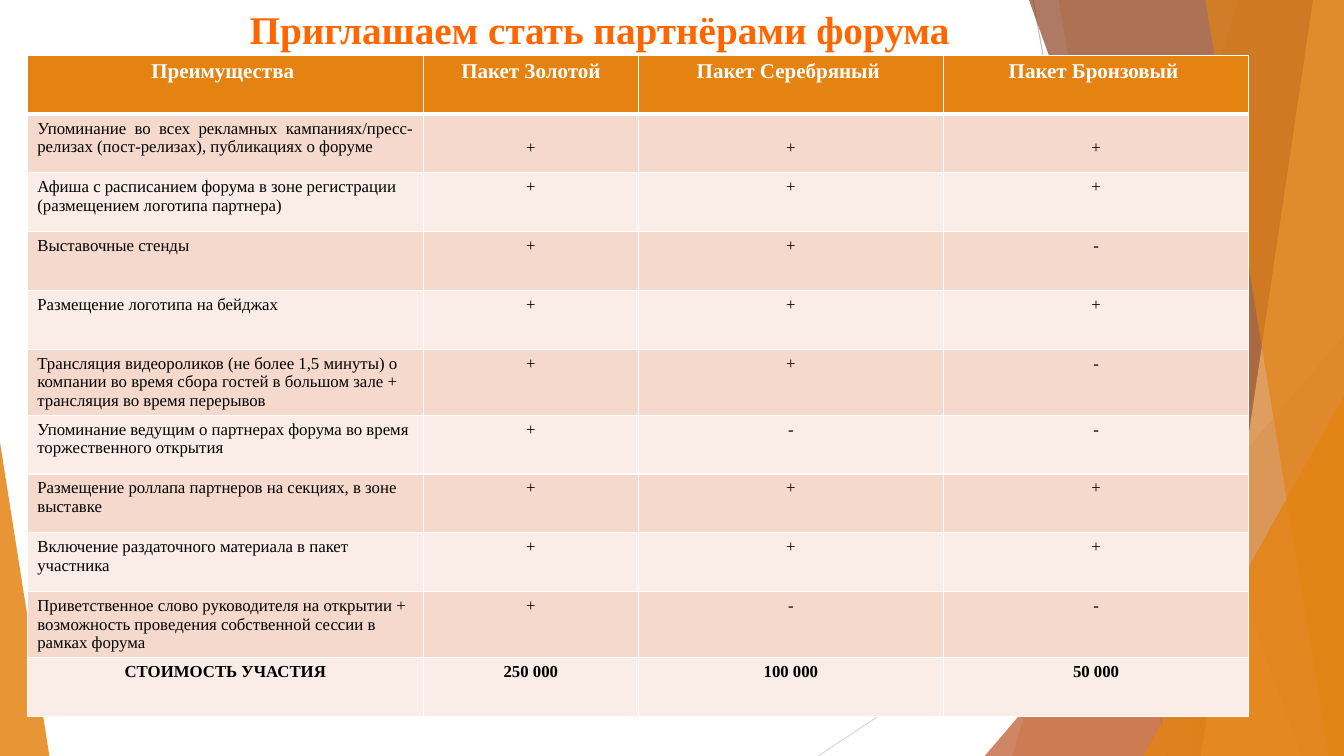
from lxml import etree
from pptx import Presentation
from pptx.dml.color import RGBColor
from pptx.enum import shapes, text
from pptx.oxml import ns
from pptx.util import Pt

ORANGE = RGBColor(0xE4, 0x83, 0x12)
AMBER = RGBColor(0xF3, 0xB5, 0x6C)
RUST = RGBColor(0xBD, 0x58, 0x2C)
BROWN = RGBColor(0x8E, 0x42, 0x21)
TITLE_ORANGE = RGBColor(0xFF, 0x66, 0x00)
PEACH = RGBColor(0xF5, 0xD9, 0xCC)
PALE_PEACH = RGBColor(0xFA, 0xED, 0xE7)
GRAY = RGBColor(0xBF, 0xBF, 0xBF)
LIGHT_GRAY = RGBColor(0xD9, 0xD9, 0xD9)
WHITE = RGBColor(0xFF, 0xFF, 0xFF)
BLACK = RGBColor(0, 0, 0)

FONT = "Times New Roman"
SLIDE_WIDTH, SLIDE_HEIGHT = 960, 540
CENTER, LEFT, JUSTIFY = (text.PP_ALIGN.CENTER, text.PP_ALIGN.LEFT,
                         text.PP_ALIGN.JUSTIFY)

PACKAGES = ["Преимущества ", "Пакет Золотой", "Пакет Серебряный ", "Пакет Бронзовый "]
BENEFITS = [
    ("Упоминание во всех рекламных кампаниях/пресс-релизах (пост-релизах), "
     "публикациях о форуме", "+++"),
    ("Афиша с расписанием форума в зоне регистрации (размещением логотипа партнера)", "+++"),
    ("Выставочные стенды", "++-"),
    ("Размещение логотипа на бейджах", "+++"),
    ("Трансляция видеороликов (не более 1,5 минуты) о компании во время сбора гостей "
     "в большом зале + трансляция во время перерывов", "++-"),
    ("Упоминание ведущим о партнерах форума во время торжественного открытия", "+--"),
    ("Размещение роллапа партнеров на секциях, в зоне выставке", "+++"),
    ("Включение раздаточного материала в пакет участника", "+++"),
    ("Приветственное слово руководителя на открытии + возможность проведения "
     "собственной сессии в рамках форума", "+--"),
]
PRICES = ["СТОИМОСТЬ УЧАСТИЯ", "250 000", "100 000", "50 000"]


def write(frame, words, size=12, color=BLACK, bold=False, align=CENTER):
    paragraph = frame.paragraphs[0]
    paragraph.alignment = align
    run = paragraph.add_run()
    run.text = words
    run.font.name = FONT
    run.font.size = Pt(size)
    run.font.bold = bold
    run.font.color.rgb = color


def paint(facet, color, opacity):
    facet.shadow.inherit = False
    facet.line.fill.background()
    facet.fill.solid()
    facet.fill.fore_color.rgb = color
    tint = facet.fill._xPr.find(".//" + ns.qn("a:srgbClr"))
    etree.SubElement(tint, ns.qn("a:alpha"), val=str(opacity * 1000))


def add_ray(slide, start, end, color):
    ray = slide.shapes.add_connector(
        shapes.MSO_CONNECTOR.STRAIGHT, *[Pt(v) for v in (*start, *end)])
    ray.line.color.rgb = color
    ray.line.width = Pt(0.75)
    etree.SubElement(ray._element.spPr, ns.qn("a:effectLst"))


def add_band(slide, right, height, top_inset, bottom_inset, color, opacity):
    outline = slide.shapes.build_freeform(Pt(right - top_inset), 0)
    outline.add_line_segments([
        (Pt(right), 0), (Pt(right), Pt(height)),
        (Pt(right - bottom_inset), Pt(height))], close=True)
    paint(outline.convert_to_shape(), color, opacity)


def add_corner(slide, left, bottom, width, height, apex, color, opacity):
    corner = slide.shapes.add_shape(
        shapes.MSO_SHAPE.ISOSCELES_TRIANGLE,
        Pt(left), Pt(bottom - height), Pt(width), Pt(height))
    corner.adjustments[0] = apex
    paint(corner, color, opacity)


def add_facets(slide, width, height):
    add_ray(slide, (width - 222, 0), (width - 126, height), GRAY)
    add_ray(slide, (width, height - 250), (width - 375.4, height), LIGHT_GRAY)
    add_band(slide, width, height, 75.8, 237, ORANGE, 30)
    add_band(slide, width, height, 204, 108, ORANGE, 20)
    add_corner(slide, width - 256.6, height, 256.6, 300.2, 1, RUST, 72)
    add_band(slide, width, height, 225, 30.5, BROWN, 70)
    add_band(slide, width, height, 22, 102, AMBER, 70)
    add_band(slide, width, height, 99, 11, ORANGE, 65)
    add_corner(slide, width - 143.4, height, 143.4, 257, 1, ORANGE, 80)
    add_corner(slide, 0, height, 35.3, 224, 0, ORANGE, 85)


def add_title(slide, left, top, width, height):
    title = slide.shapes.title
    slide.shapes._spTree.append(title._element)
    title.left, title.top, title.width, title.height = map(Pt, (left, top, width, height))
    title.text_frame.vertical_anchor = text.MSO_ANCHOR.TOP
    title.text_frame.word_wrap = True
    write(title.text_frame, "Приглашаем стать партнёрами форума ",
          size=28, color=TITLE_ORANGE, bold=True)


def border(cell, **widths):
    properties = cell._tc.get_or_add_tcPr()
    for place, (side, width) in enumerate(widths.items()):
        edge = etree.Element(ns.qn(f"a:ln{side}"), w=str(Pt(width)))
        solid = etree.SubElement(edge, ns.qn("a:solidFill"))
        etree.SubElement(solid, ns.qn("a:srgbClr"), val=str(WHITE))
        properties.insert(place, edge)


def add_packages(slide, left, top, widths, row_height):
    rows = [PACKAGES, *[[benefit, *marks] for benefit, marks in BENEFITS], PRICES]
    last = len(rows) - 1
    table = slide.shapes.add_table(
        len(rows), len(widths), Pt(left), Pt(top),
        Pt(sum(widths)), Pt(row_height * len(rows))).table
    for column, width in zip(table.columns, widths):
        column.width = Pt(width)
    for r, row in enumerate(rows):
        table.rows[r].height = Pt(row_height)
        for c, words in enumerate(row):
            cell = table.cell(r, c)
            cell.fill.solid()
            if r == 0:
                cell.fill.fore_color.rgb = ORANGE
                write(cell.text_frame, words, size=15, color=WHITE, bold=True)
            else:
                cell.fill.fore_color.rgb = PEACH if r % 2 else PALE_PEACH
                benefit_align = JUSTIFY if r == 1 else LEFT
                write(cell.text_frame, words, bold=r == last,
                      align=benefit_align if c == 0 and r < last else CENTER)
            if r == 1 and c > 0:
                cell.margin_top = Pt(17.2)
            border(cell, L=1, R=1, T=3 if r == 1 else 1, B=3 if r == 0 else 1)


def main():
    deck = Presentation()
    deck.slide_width, deck.slide_height = Pt(SLIDE_WIDTH), Pt(SLIDE_HEIGHT)
    slide = deck.slides.add_slide(deck.slide_layouts[5])
    add_facets(slide, SLIDE_WIDTH, SLIDE_HEIGHT)
    add_title(slide, 45.4, 0, 772.6, 80)
    add_packages(slide, 19.5, 39.5, [283, 153.5, 218, 218], 42)
    deck.save("out.pptx")


if __name__ == "__main__":
    main()
